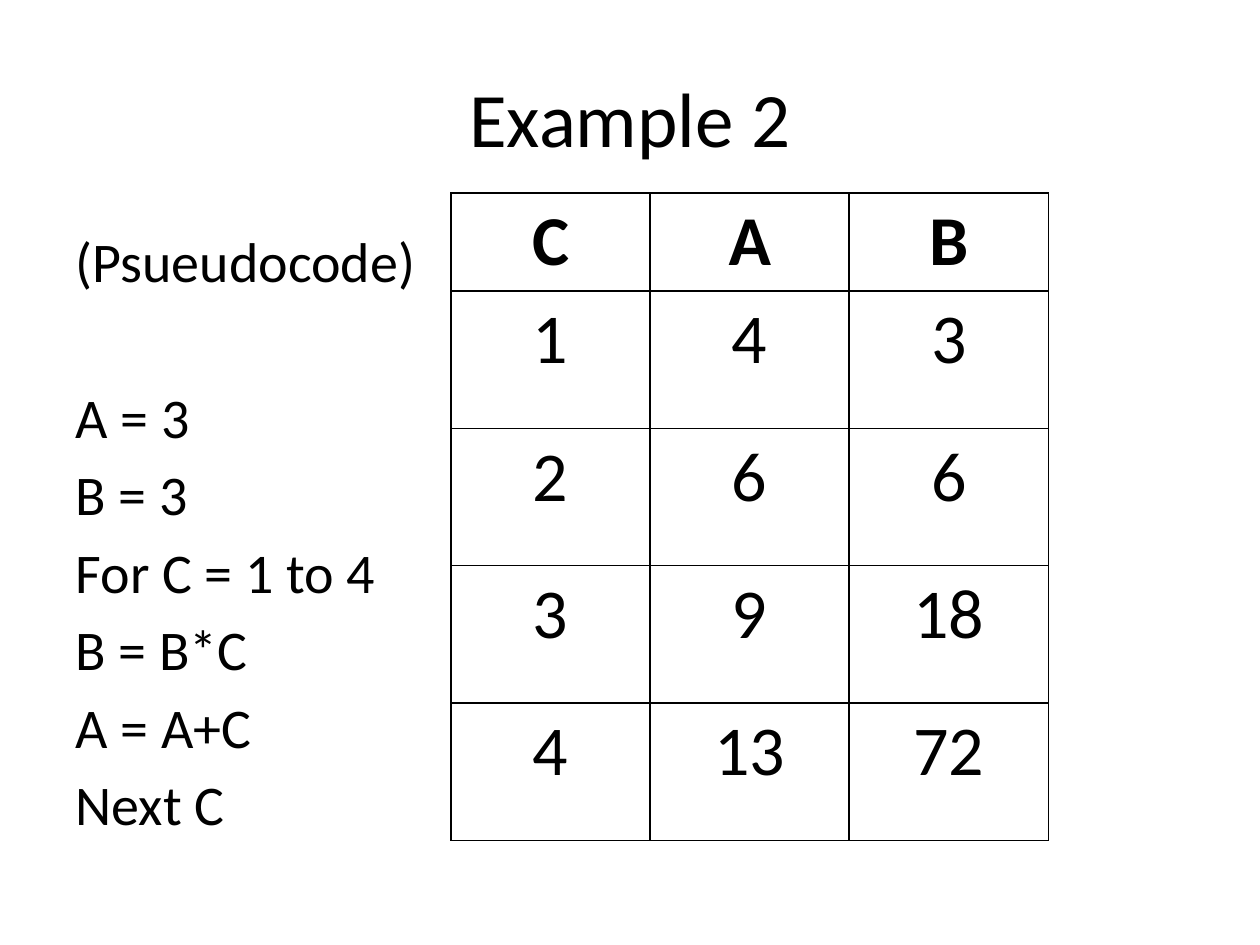
from lxml import etree
from pptx import Presentation
from pptx.dml.color import RGBColor
from pptx.enum import text
from pptx.oxml import ns
from pptx.util import Inches, Pt

COLORS = {"ink": "000000", "paper": "FFFFFF"}
FONT = "Calibri"
CODE_GAP = 5.8       # points between lines of code
CODE_LINE = 39       # points, height of one line of code


def write(paragraph, content, size, bold=False, align=None, before=None):
    """Put formatted text into a paragraph."""
    run = paragraph.add_run()
    run.text = content
    run.font.name = FONT
    run.font.size = Pt(size)
    run.font.bold = bold
    run.font.color.rgb = RGBColor.from_string(COLORS["ink"])
    if align is not None:
        paragraph.alignment = align
    if before is not None:
        paragraph.space_before = Pt(before)


class SlideBuilder:
    def __init__(self, presentation):
        self.slide = presentation.slides.add_slide(presentation.slide_layouts[1])
        self.center = text.PP_ALIGN.CENTER

    def place(self, shape, left, top, width, height):
        shape.left, shape.top = Inches(left), Inches(top)
        shape.width, shape.height = Inches(width), Inches(height)
        shape.text_frame.auto_size = text.MSO_AUTO_SIZE.NONE
        return shape.text_frame

    def title(self, content, *box):
        frame = self.place(self.slide.shapes.title, *box)
        frame.vertical_anchor = text.MSO_ANCHOR.MIDDLE
        write(frame.paragraphs[0], content, 44, align=self.center)

    def code(self, heading, lines, *box):
        frame = self.place(self.slide.placeholders[1], *box)
        write(frame.paragraphs[0], heading, 32, before=CODE_GAP)
        for index, line in enumerate(lines):
            # One empty line's height separates the heading from the code
            extra = CODE_LINE + CODE_GAP if index == 0 else 0
            write(frame.add_paragraph(), line, 32, before=CODE_GAP + extra)
        for paragraph in frame.paragraphs:
            properties = paragraph._p.get_or_add_pPr()
            etree.SubElement(properties, ns.qn("a:buNone"))

    def border(self, cell):
        properties = cell._tc.get_or_add_tcPr()
        for index, side in enumerate(("lnL", "lnR", "lnT", "lnB")):
            line = etree.Element(ns.qn(f"a:{side}"), w=str(Pt(1)))
            fill = etree.SubElement(line, ns.qn("a:solidFill"))
            etree.SubElement(fill, ns.qn("a:srgbClr"), val=COLORS["ink"])
            properties.insert(index, line)

    def table(self, rows, left, top, column_width, heights):
        columns = len(rows[0])
        frame = self.slide.shapes.add_table(
            len(rows), columns, Inches(left), Inches(top),
            Inches(column_width * columns), Inches(sum(heights)))
        table = frame.table
        table.first_row = table.horz_banding = False
        for column in table.columns:
            column.width = Inches(column_width)
        for index, (values, height) in enumerate(zip(rows, heights)):
            table.rows[index].height = Inches(height)
            for cell, value in zip(table.rows[index].cells, values):
                cell.fill.solid()
                cell.fill.fore_color.rgb = RGBColor.from_string(COLORS["paper"])
                self.border(cell)
                write(cell.text_frame.paragraphs[0], str(value), 40,
                      bold=index == 0, align=self.center)


def main():
    presentation = Presentation()
    presentation.slide_width, presentation.slide_height = Inches(10), Inches(7.5)
    builder = SlideBuilder(presentation)

    # Title and pseudocode
    builder.title("Example 2", 0.5, 0.3, 9, 1.25)
    builder.code("(Psueudocode)",
                 ["A = 3", "B = 3", "For C = 1 to 4", "B = B*C", "A = A+C", "Next C"],
                 0.5, 1.75, 9, 4.95)

    # Trace table: values after each pass of the loop
    trace = [("C", "A", "B"), (1, 4, 3), (2, 6, 6), (3, 9, 18), (4, 13, 72)]
    builder.table(trace, 3.58, 1.53, 1.58, [0.78] + [1.09] * 4)

    presentation.save("out.pptx")


if __name__ == "__main__":
    main()
